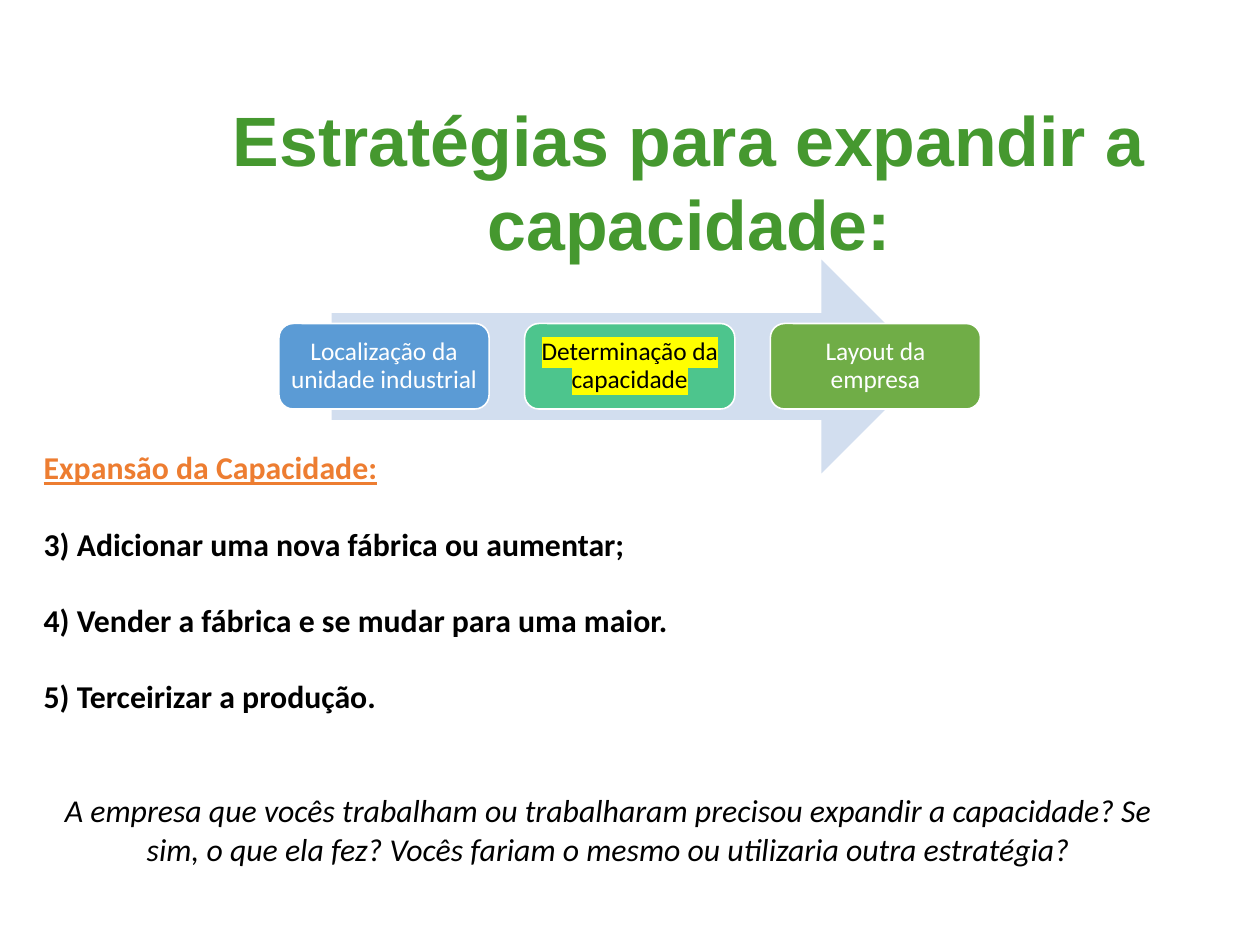
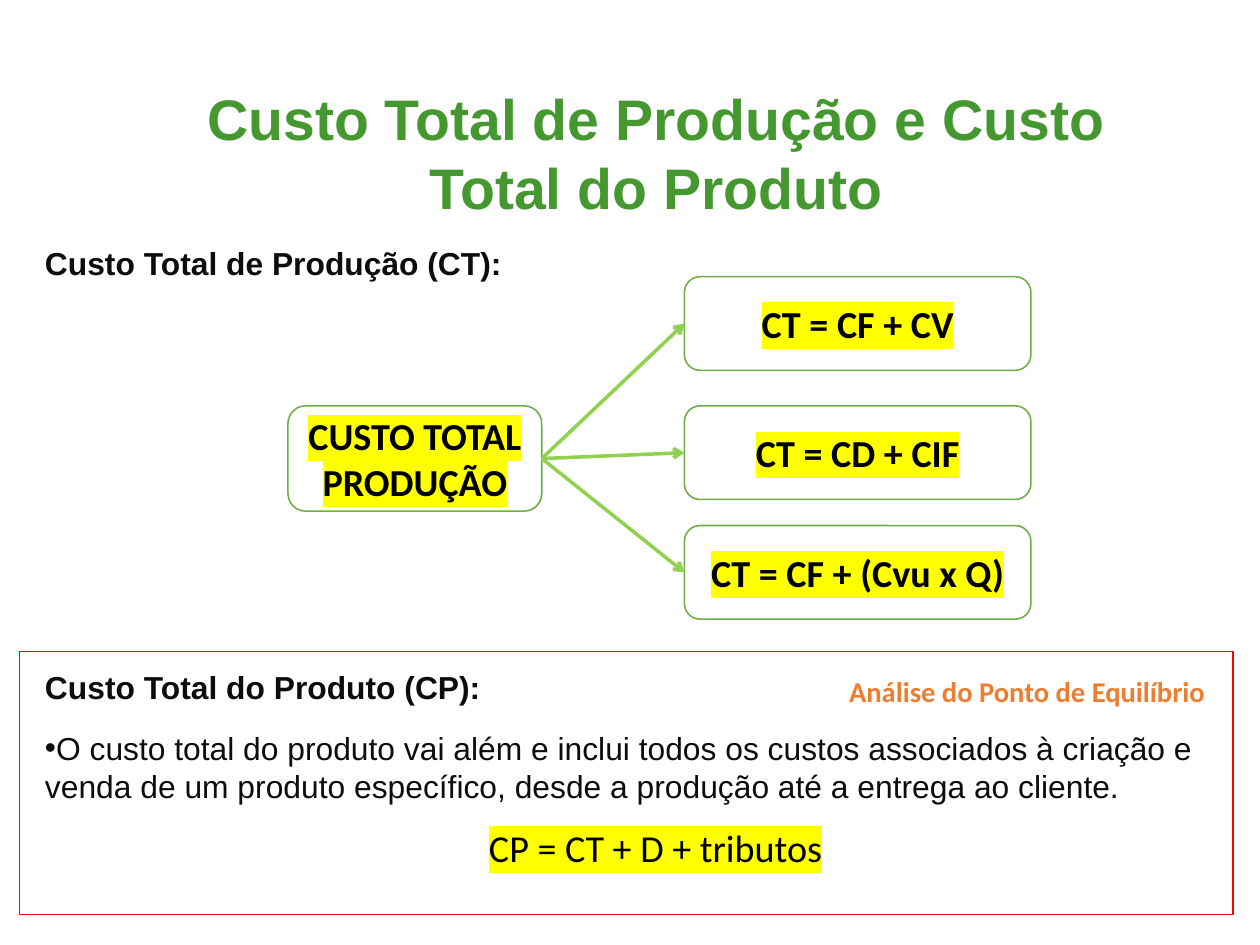
from pptx import Presentation
from pptx.dml.color import RGBColor
from pptx.enum.shapes import MSO_CONNECTOR, MSO_SHAPE
from pptx.enum.text import MSO_ANCHOR, MSO_AUTO_SIZE, PP_ALIGN
from pptx.oxml.ns import qn
from pptx.util import Cm, Pt
from lxml.etree import SubElement, Element

COLORS = {
    "title": "45982F", "accent": "ED7D31", "text": "000000", "body": "0D0D0D",
    "white": "FFFFFF", "highlight": "FFFF00", "band": "D2DEEF",
    "blue": "5B9BD5", "teal": "4DC58D", "green": "70AD47",
    "arrow": "92D050", "frame": "FF0000",
}


def color(name):
    return RGBColor.from_string(COLORS[name])


def place(shape, left, top, width, height):
    shape.left, shape.top = Cm(left), Cm(top)
    shape.width, shape.height = Cm(width), Cm(height)


def set_frame(frame, inset, anchor=MSO_ANCHOR.TOP):
    frame.word_wrap = True
    frame.auto_size = MSO_AUTO_SIZE.NONE
    frame.vertical_anchor = anchor
    frame.margin_left = frame.margin_right = Cm(inset)
    frame.margin_top = frame.margin_bottom = Cm(inset)


def set_bullet(para, symbol=None):
    props = para._p.get_or_add_pPr()
    props.set("marL", "0")
    props.set("indent", "0")
    if symbol:
        SubElement(props, qn("a:buChar")).set("char", symbol)
    else:
        SubElement(props, qn("a:buNone"))


def format_para(para, size, ink="text", font="Calibri", bold=False, italic=False,
                underline=False, marked=False, align=PP_ALIGN.LEFT, before=0):
    para.alignment = align
    para.space_before = Pt(before)
    for span in para.runs:
        span.font.size = Pt(size)
        span.font.name = font
        span.font.bold = bold
        span.font.italic = italic
        span.font.underline = underline
        span.font.color.rgb = color(ink)
        if marked:
            mark = Element(qn("a:highlight"))
            SubElement(mark, qn("a:srgbClr")).set("val", COLORS["highlight"])
            span.font._element.find(qn("a:solidFill")).addnext(mark)


def add_page(deck, title, size, left, top):
    page = deck.slides.add_slide(deck.slide_layouts[1])
    box = page.shapes.title
    place(box, left, top, 22.2, 3.5)
    set_frame(box.text_frame, 0, MSO_ANCHOR.MIDDLE)
    box.text_frame.text = title
    format_para(box.text_frame.paragraphs[0], size, "title", "Arial", bold=True,
                align=PP_ALIGN.CENTER)
    return page


def fill_body(page, area, items):
    box = page.placeholders[1]
    place(box, *area)
    set_frame(box.text_frame, 0)
    box.text_frame.text = "\n".join(text for text, _, _ in items)
    for para, (_, bullet, style) in zip(box.text_frame.paragraphs, items):
        set_bullet(para, bullet)
        format_para(para, 20, **style)


def add_label(page, area, text, size, inset=0.25, **style):
    box = page.shapes.add_textbox(*(Cm(length) for length in area))
    set_frame(box.text_frame, inset)
    box.text_frame.text = text
    format_para(box.text_frame.paragraphs[0], size, **style)


def add_block(page, kind, area, fill=None, line=None):
    block = page.shapes.add_shape(kind, *(Cm(length) for length in area))
    block.shadow.inherit = False
    if fill:
        block.fill.solid()
        block.fill.fore_color.rgb = color(fill)
    else:
        block.fill.background()
    if line:
        block.line.color.rgb = color(line)
        block.line.width = Pt(1)
    else:
        block.line.fill.background()
    return block


def add_node(page, area, text, size, fill, line, spacing=1.0, **style):
    node = add_block(page, MSO_SHAPE.ROUNDED_RECTANGLE, area, fill, line)
    set_frame(node.text_frame, 0.15, MSO_ANCHOR.MIDDLE)
    node.text_frame.text = text
    para = node.text_frame.paragraphs[0]
    para.line_spacing = spacing
    format_para(para, size, align=PP_ALIGN.CENTER, **style)
    return node


def add_arrow(page, source, target):
    arrow = page.shapes.add_connector(MSO_CONNECTOR.STRAIGHT, 0, 0, 0, 0)
    arrow.begin_connect(source, 3)
    arrow.end_connect(target, 1)
    arrow.line.color.rgb = color("arrow")
    arrow.line.width = Pt(2.25)
    SubElement(arrow.line._get_or_add_ln(), qn("a:tailEnd")).set("type", "arrow")
    SubElement(arrow._element.spPr, qn("a:effectLst"))


def build_strategies(deck):
    page = add_page(deck, "Estratégias para expandir a capacidade:", 44, 4.22, 2.26)
    add_block(page, MSO_SHAPE.RIGHT_ARROW, (7.37, 5.77, 13.26, 4.75), "band")
    steps = [
        ("Localização da unidade industrial", "blue", {"ink": "white"}),
        ("Determinação da capacidade", "teal", {"marked": True}),
        ("Layout da empresa", "green", {"ink": "white"}),
    ]
    for index, (text, fill, style) in enumerate(steps):
        add_node(page, (6.2 + index * 5.46, 7.19, 4.67, 1.9), text, 16, fill, "white",
                 spacing=0.9, **style)
    strong = {"bold": True, "before": 24}
    fill_body(page, (0.97, 9.96, 25.1, 10.5), [
        ("Expansão da Capacidade:", None,
         {"ink": "accent", "bold": True, "underline": True}),
        ("3) Adicionar uma nova fábrica ou aumentar;", None, strong),
        ("4) Vender a fábrica e se mudar para uma maior.", None, strong),
        ("5) Terceirizar a produção.", None, strong),
        ("A empresa que vocês trabalham ou trabalharam precisou expandir a capacidade? "
         "Se sim, o que ela fez? Vocês fariam o mesmo ou utilizaria outra estratégia?",
         None, {"italic": True, "align": PP_ALIGN.CENTER, "before": 48}),
    ])


def build_costs(deck):
    page = add_page(deck, "Custo Total de Produção e Custo Total do Produto", 36, 3.48, 1.63)
    heading = {"ink": "body", "font": "Arial", "bold": True}
    add_label(page, (1, 5.42, 12, 0.9), "Custo Total de Produção (CT):", 20, inset=0,
              **heading)
    fill_body(page, (1, 14.84, 25.6, 3.2), [
        ("Custo Total do Produto (CP):", None, heading),
        ("O custo total do produto vai além e inclui todos os custos associados à criação "
         "e venda de um produto específico, desde a produção até a entrega ao cliente.",
         "•", {"ink": "body", "font": "Arial", "before": 14.1}),
    ])
    add_label(page, (7.57, 18.19, 14, 1.27), "CP = CT + D + tributos", 24, inset=0.13,
              marked=True, align=PP_ALIGN.CENTER)
    look = {"size": 24, "fill": "white", "line": "green", "bold": True, "marked": True}
    total = add_node(page, (6.4, 9.02, 5.64, 2.34), "CUSTO TOTAL PRODUÇÃO", **look)
    formulas = [("CT = CF + CV", 6.15), ("CT = CD + CIF", 9.02),
                ("CT = CF + (Cvu x Q)", 11.68)]
    for text, top in formulas:
        formula = add_node(page, (15.21, top, 7.7, 2.08), text, **look)
        add_arrow(page, total, formula)
    add_block(page, MSO_SHAPE.RECTANGLE, (0.43, 14.48, 26.97, 5.84), line="frame")
    add_label(page, (18.67, 14.77, 8.8, 1), "Análise do Ponto de Equilíbrio", 18,
              inset=0.2, ink="accent", bold=True)


def main():
    deck = Presentation()
    deck.slide_width, deck.slide_height = Cm(28), Cm(21)
    build_strategies(deck)
    build_costs(deck)
    deck.save("out.pptx")


if __name__ == "__main__":
    main()
